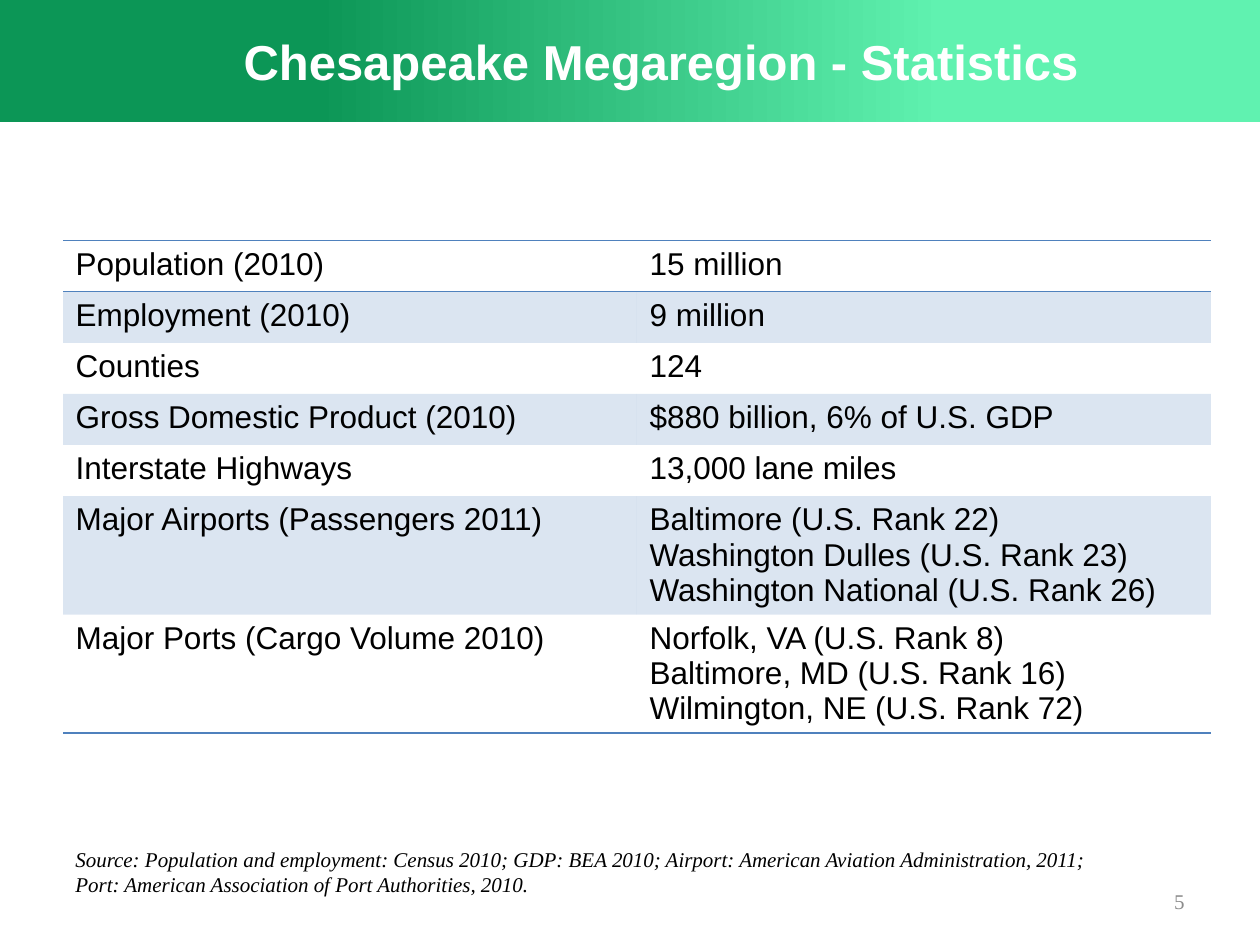
import pptx
import pptx.util
import pptx.dml.color
import pptx.enum.shapes
import pptx.enum.text
import pptx.oxml
import pptx.oxml.ns

Cm = pptx.util.Cm
Pt = pptx.util.Pt
qn = pptx.oxml.ns.qn
Align = pptx.enum.text.PP_ALIGN
Anchor = pptx.enum.text.MSO_ANCHOR


def paint(color, tint):
    color.rgb = pptx.dml.color.RGBColor.from_string(tint)


def style(frame, face, size, tint, align=Align.LEFT, bold=False, italic=False):
    for para in frame.paragraphs:
        para.alignment = align
        for run in para.runs:
            run.font.name = face
            run.font.size = Pt(size)
            run.font.bold = bold
            run.font.italic = italic
            paint(run.font.color, tint)


deck = pptx.Presentation()
deck.slide_width = Cm(25.4)
deck.slide_height = Cm(19.05)
slide = deck.slides.add_slide(deck.slide_layouts[6])
shapes = slide.shapes

band = shapes.add_shape(pptx.enum.shapes.MSO_SHAPE.RECTANGLE, 0, 0, Cm(25.4), Cm(2.46))
band.shadow.inherit = False
band.line.fill.background()
band.fill.gradient()
band.fill.gradient_angle = 0
for stop, (place, tint) in zip(band.fill.gradient_stops, [(0.25, "0C9656"), (0.75, "60F2B0")]):
    stop.position = place
    paint(stop.color, tint)

facts = [
    ("Population (2010)", "15 million"),
    ("Employment (2010)", "9 million"),
    ("Counties", "124"),
    ("Gross Domestic Product (2010)", "$880 billion, 6% of U.S. GDP"),
    ("Interstate Highways", "13,000 lane miles"),
    ("Major Airports (Passengers 2011)",
     "Baltimore (U.S. Rank 22)\nWashington Dulles (U.S. Rank 23)\nWashington National (U.S. Rank 26)"),
    ("Major Ports (Cargo Volume 2010)",
     "Norfolk, VA (U.S. Rank 8)\nBaltimore, MD (U.S. Rank 16)\nWilmington, NE (U.S. Rank 72)"),
]
rules = {0: ["lnT", "lnB"], len(facts) - 1: ["lnB"]}

grid = shapes.add_table(len(facts), 2, Cm(1.27), Cm(4.85), Cm(23.14), Cm(10.24))
table = grid.table
table.first_row = False
table.horz_banding = False
grid._element.find(".//" + qn("a:tableStyleId")).text = "{2D5ABB26-0587-4C30-8999-92F81FD0307C}"

for i, fact in enumerate(facts):
    table.rows[i].height = Cm(1.03)
    for j, text in enumerate(fact):
        cell = table.cell(i, j)
        cell.text_frame.text = text
        style(cell.text_frame, "Arial", 18, "000000")
        props = cell._tc.get_or_add_tcPr()
        for side in rules.get(i, []):
            props.append(pptx.oxml.parse_xml(
                f'<a:{side} xmlns:a="http://schemas.openxmlformats.org/drawingml/2006/main" w="12700">'
                f'<a:solidFill><a:srgbClr val="4F81BD"/></a:solidFill></a:{side}>'))
        if i % 2:
            cell.fill.solid()
            paint(cell.fill.fore_color, "4F81BD")
            shade = props.find(".//" + qn("a:srgbClr"))
            shade.append(shade.makeelement(qn("a:alpha"), {"val": "20000"}))
        else:
            cell.fill.background()

source = (
    "Source: Population and employment: Census 2010; GDP: BEA 2010; "
    "Airport: American Aviation Administration, 2011;\n"
    "Port: American Association of Port Authorities, 2010."
)
times = "Times New Roman"
notes = [
    ("5", (18.21, 17.65, 5.92, 1.02), Anchor.MIDDLE, (times, 12, "8C8C8C", Align.RIGHT)),
    ("Chesapeake Megaregion - Statistics", (2.06, 0.23, 22.53, 2.01), Anchor.MIDDLE,
     ("Arial", 28, "FFFFFF", Align.CENTER, True)),
    (source, (1.27, 16.94, 22.02, 1.27), Anchor.TOP,
     (times, 12, "000000", Align.LEFT, False, True)),
]
for text, place, anchor, look in notes:
    box = shapes.add_textbox(*[Cm(n) for n in place])
    frame = box.text_frame
    frame.word_wrap = True
    frame.vertical_anchor = anchor
    frame.text = text
    style(frame, *look)

deck.save("out.pptx")
